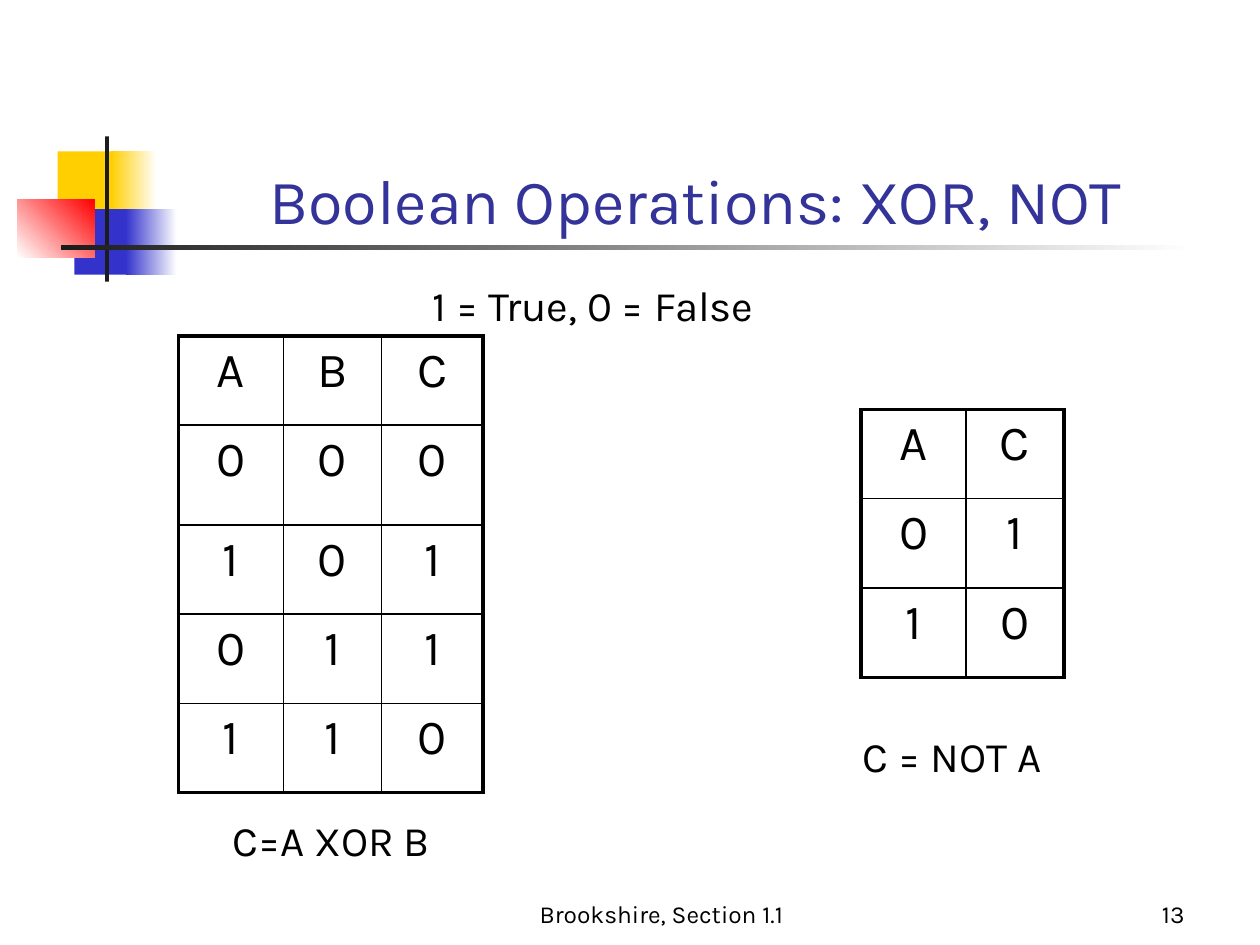
from lxml.etree import SubElement
from pptx import Presentation
from pptx.dml.color import RGBColor
from pptx.enum.shapes import MSO_SHAPE as Shape
from pptx.enum.text import MSO_ANCHOR as Anchor, MSO_AUTO_SIZE as AutoSize, PP_ALIGN as Align
from pptx.oxml.ns import qn
from pptx.util import Pt

FONT = "Karla"
BLACK = RGBColor(0x00, 0x00, 0x00)
WHITE = RGBColor(0xFF, 0xFF, 0xFF)
YELLOW = RGBColor(0xFF, 0xCF, 0x01)
BLUE = RGBColor(0x33, 0x33, 0xCC)
RED = RGBColor(0xFF, 0x00, 0x00)
CHARCOAL = RGBColor(0x1C, 0x1C, 0x1C)
INDIGO = RGBColor(0x33, 0x33, 0x99)
THICK, THIN = 2.25, 1


def write(frame, text, size=24, color=BLACK, align=Align.LEFT, before=0):
    """Fill a text frame with one formatted paragraph."""
    para = frame.paragraphs[0]
    para.alignment = align
    para.space_before = Pt(before)
    span = para.add_run()
    span.text = text
    span.font.name = FONT
    span.font.size = Pt(size)
    span.font.color.rgb = color


def add_block(page, area, color, end=None, angle=0):
    """Add a borderless rectangle, solid or fading from color to end."""
    block = page.shapes.add_shape(Shape.RECTANGLE, *map(Pt, area))
    block.shadow.inherit = False
    block.line.fill.background()
    if end is None:
        block.fill.solid()
        block.fill.fore_color.rgb = color
        return
    block.fill.gradient()
    block.fill.gradient_angle = angle
    for stop, shade in zip(block.fill.gradient_stops, (color, end)):
        stop.color.rgb = shade


def add_emblem(page):
    """Add the coloured squares and the two crossing bars."""
    add_block(page, (33, 86.5, 34.5, 37.5), YELLOW)
    add_block(page, (63.5, 86.5, 26, 37.5), YELLOW, WHITE)
    add_block(page, (42.5, 119.5, 33, 37.5), BLUE)
    add_block(page, (72, 119.5, 29, 37.5), BLUE, WHITE)
    add_block(page, (10, 114, 44, 33), WHITE, RED, angle=45)
    add_block(page, (60, 78, 2.3, 83), CHARCOAL)
    add_block(page, (34.75, 140.25, 648, 2.4), CHARCOAL, WHITE)


def add_title(page, text):
    """Place and format the title placeholder."""
    title = page.shapes.title
    title.left, title.top, title.width, title.height = map(Pt, (91, 49, 613, 90))
    title.text_frame.auto_size = AutoSize.NONE
    title.text_frame.vertical_anchor = Anchor.BOTTOM
    write(title.text_frame, text, size=36, color=INDIGO, align=Align.CENTER)


def add_label(page, area, text):
    """Add an unwrapped text box that grows with its text."""
    frame = page.shapes.add_textbox(*map(Pt, area)).text_frame
    frame.word_wrap = False
    frame.auto_size = AutoSize.SHAPE_TO_FIT_TEXT
    write(frame, text)


def add_footer(page, area, text, align):
    """Add a small text box anchored to the bottom."""
    frame = page.shapes.add_textbox(*map(Pt, area)).text_frame
    frame.word_wrap = True
    frame.vertical_anchor = Anchor.BOTTOM
    write(frame, text, size=14, align=align)


def set_border(cell, side, width):
    """Draw one black border of a cell."""
    properties = cell._tc.get_or_add_tcPr()
    line = SubElement(properties, qn(f"a:ln{side}"), w=str(Pt(width)))
    fill = SubElement(line, qn("a:solidFill"))
    SubElement(fill, qn("a:srgbClr"), val=str(BLACK))


def add_truth_table(page, left, top, widths, heights, rows):
    """Add a truth table with a thick frame and thin inner lines."""
    area = map(Pt, (left, top, sum(widths), sum(heights)))
    table = page.shapes.add_table(len(rows), len(widths), *area).table
    table.first_row = table.horz_banding = False
    for column, width in zip(table.columns, widths):
        column.width = Pt(width)
    for row, height in zip(table.rows, heights):
        row.height = Pt(height)
    for r, values in enumerate(rows):
        for c, value in enumerate(values):
            cell = table.cell(r, c)
            edges = {"L": c == 0, "R": c == len(widths) - 1,
                     "T": r == 0, "B": r == len(rows) - 1}
            for side, outer in edges.items():
                set_border(cell, side, THICK if outer else THIN)
            cell.fill.background()
            write(cell.text_frame, value, size=28, align=Align.CENTER, before=5.6)


def main():
    """Build the slide and save it."""
    deck = Presentation()
    deck.slide_width, deck.slide_height = Pt(720), Pt(540)
    page = deck.slides.add_slide(deck.slide_layouts[5])
    add_emblem(page)
    add_footer(page, (264, 498, 228, 36), "Brookshire, Section 1.1", Align.CENTER)
    add_footer(page, (534, 498, 150, 36), "13", Align.RIGHT)
    add_title(page, "Boolean Operations: XOR, NOT")
    add_truth_table(page, 492, 234, (60, 56), (51,) * 3, ("AC", "01", "10"))
    add_label(page, (486, 414, 130, 36), "C = NOT A")
    add_label(page, (240, 156, 223, 36), "1 = True, 0 = False")
    add_truth_table(page, 102, 192, (60, 56, 58), (51, 57, 51, 51, 51),
                    ("ABC", "000", "101", "011", "110"))
    add_label(page, (126, 462, 135, 36), "C=A XOR B")
    deck.save("out.pptx")


if __name__ == "__main__":
    main()
